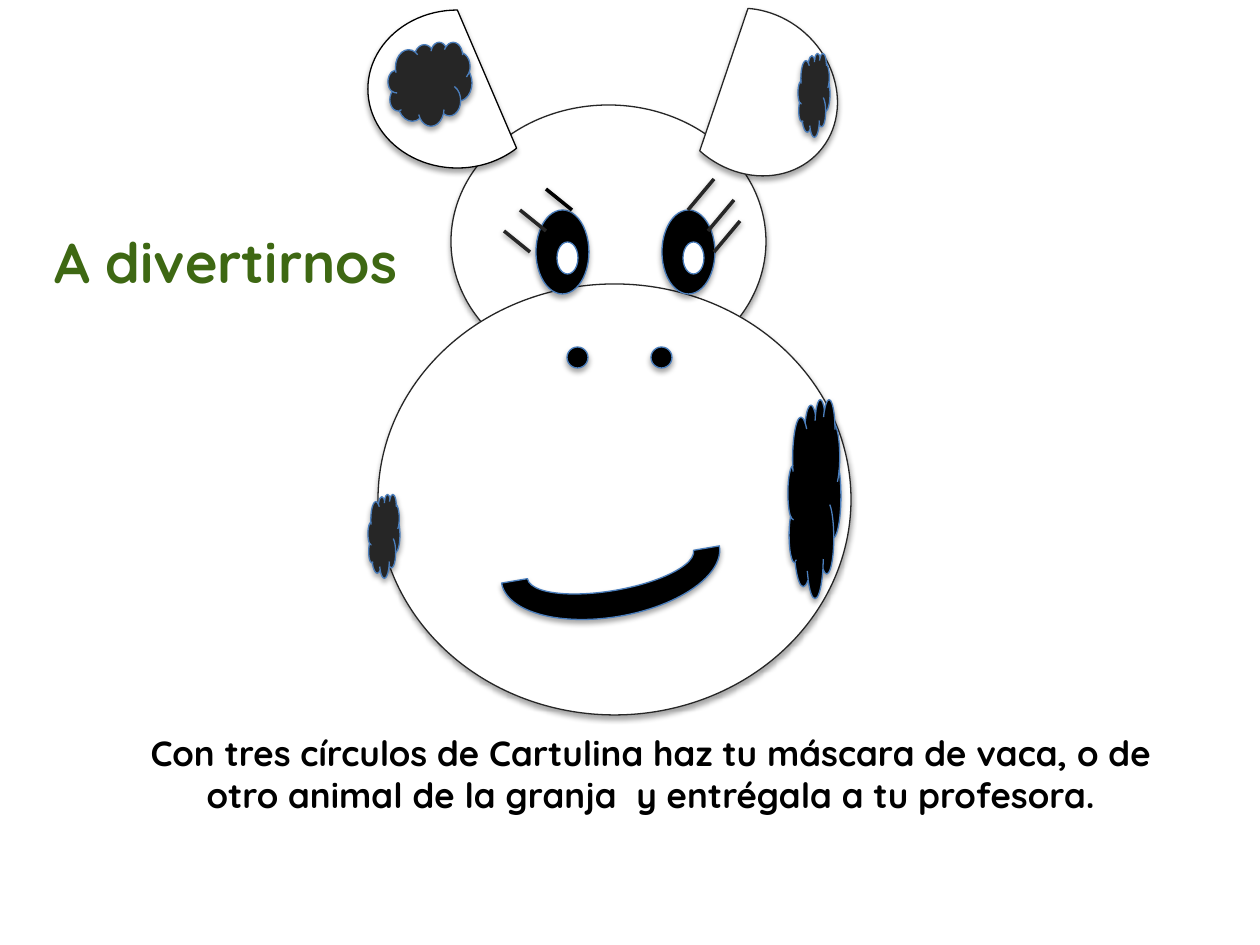
from lxml import etree
from pptx import Presentation
from pptx.dml.color import RGBColor
from pptx.enum.shapes import MSO_CONNECTOR, MSO_SHAPE
from pptx.enum.text import MSO_AUTO_SIZE, PP_ALIGN
from pptx.oxml.ns import qn
from pptx.util import Emu, Pt

OVAL, CHORD = MSO_SHAPE.OVAL, MSO_SHAPE.CHORD
ARC, CLOUD = MSO_SHAPE.BLOCK_ARC, MSO_SHAPE.CLOUD
STRAIGHT = MSO_CONNECTOR.STRAIGHT
LEFT, CENTER = PP_ALIGN.LEFT, PP_ALIGN.CENTER
GROW = MSO_AUTO_SIZE.SHAPE_TO_FIT_TEXT

FONT = "Quicksand"
WHITE, BLACK, DARK, BLUE, GREEN = "FFFFFF", "000000", "262626", "4B7EBC", "3E6813"
EYE_GAP, NOSTRIL_GAP = 126, 84

# preset, (left, top, width, height), rotation, fill, line
FACE = [
    (OVAL, (451, 105, 315, 273), 0, WHITE, DARK),       # head
    (OVAL, (378, 284, 473, 431), 0, WHITE, DARK),       # muzzle
    (CHORD, (368, 10, 179, 158), 0, WHITE, BLACK),      # left ear
    (CHORD, (663, 13, 179, 158), 221.9, WHITE, DARK),   # right ear
]
# box of the left one, distance to the right one, fill
PAIRS = [
    ((536, 210, 53, 84), EYE_GAP, BLACK),               # eyes
    ((557, 242, 21, 32), EYE_GAP, WHITE),               # pupils
    ((567, 347, 21, 21), NOSTRIL_GAP, BLACK),           # nostrils
]
MOUTH = (ARC, (500, 512, 221, 105), 170.3, BLACK, BLUE)
PATCHES = [
    ((798, 53, 32, 84), DARK),
    ((368, 494, 32, 84), DARK),
    ((788, 399, 53, 199), BLACK),
    ((388, 42, 84, 84), DARK),
]
# (run, rise) shared by one eye's lashes, then start and colour of each
LASHES = [
    ((26, 21), [(520, 210, DARK), (504, 231, DARK), (546, 189, BLACK)]),
    ((26, -31), [(688, 210, DARK), (708, 231, DARK), (714, 252, DARK)]),
]
# text, box, size, colour, alignment
TEXTS = [
    ("Con tres círculos de Cartulina haz tu máscara de vaca, o de otro animal "
     "de la granja  y entrégala a tu profesora.",
     (126, 725, 1050, 140), 20, BLACK, CENTER),
    ("A divertirnos", (42, 221, 368, 81), 32, GREEN, LEFT),
]


def px(n):
    return Emu(round(n * 914400 / 126))


def rgb(color):
    return RGBColor.from_string(color)


def add_shadow(s, dist, alpha):
    """Give a shape or connector a soft black shadow straight below it."""
    effects = etree.SubElement(s._element.spPr, qn("a:effectLst"))
    outer = etree.SubElement(effects, qn("a:outerShdw"), blurRad=str(Pt(3.1)),
                             dist=str(Pt(dist)), dir="5400000", rotWithShape="0")
    color = etree.SubElement(outer, qn("a:srgbClr"), val=BLACK)
    etree.SubElement(color, qn("a:alpha"), val=str(alpha * 1000))


def add_part(shapes, preset, box, rotation, fill, line):
    s = shapes.add_shape(preset, *map(px, box))
    s.rotation = rotation
    s.fill.solid()
    s.fill.fore_color.rgb = rgb(fill)
    s.line.color.rgb = rgb(line)
    s.line.width = Pt(0.75)
    add_shadow(s, 1.8, 35)


def add_lash(shapes, x, y, run, rise, color):
    s = shapes.add_connector(STRAIGHT, px(x), px(y), px(x + run), px(y + rise))
    s.line.color.rgb = rgb(color)
    s.line.width = Pt(2)
    add_shadow(s, 1.6, 38)


def add_text(shapes, text, box, size, color, align):
    tf = shapes.add_textbox(*map(px, box)).text_frame
    tf.word_wrap = True
    tf.auto_size = GROW
    p = tf.paragraphs[0]
    p.alignment = align
    r = p.add_run()
    r.text = text
    r.font.name, r.font.size, r.font.bold = FONT, Pt(size), True
    r.font.color.rgb = rgb(color)


def main():
    prs = Presentation()
    prs.slide_width, prs.slide_height = px(1260), px(945)
    shapes = prs.slides.add_slide(prs.slide_layouts[6]).shapes

    for part in FACE:
        add_part(shapes, *part)
    for (x, y, w, h), gap, fill in PAIRS:
        for left in (x, x + gap):
            add_part(shapes, OVAL, (left, y, w, h), 0, fill, BLUE)
    add_part(shapes, *MOUTH)
    for box, fill in PATCHES:
        add_part(shapes, CLOUD, box, 0, fill, BLUE)
    for (run, rise), starts in LASHES:
        for x, y, color in starts:
            add_lash(shapes, x, y, run, rise, color)
    for text in TEXTS:
        add_text(shapes, *text)

    prs.save("out.pptx")


if __name__ == "__main__":
    main()
